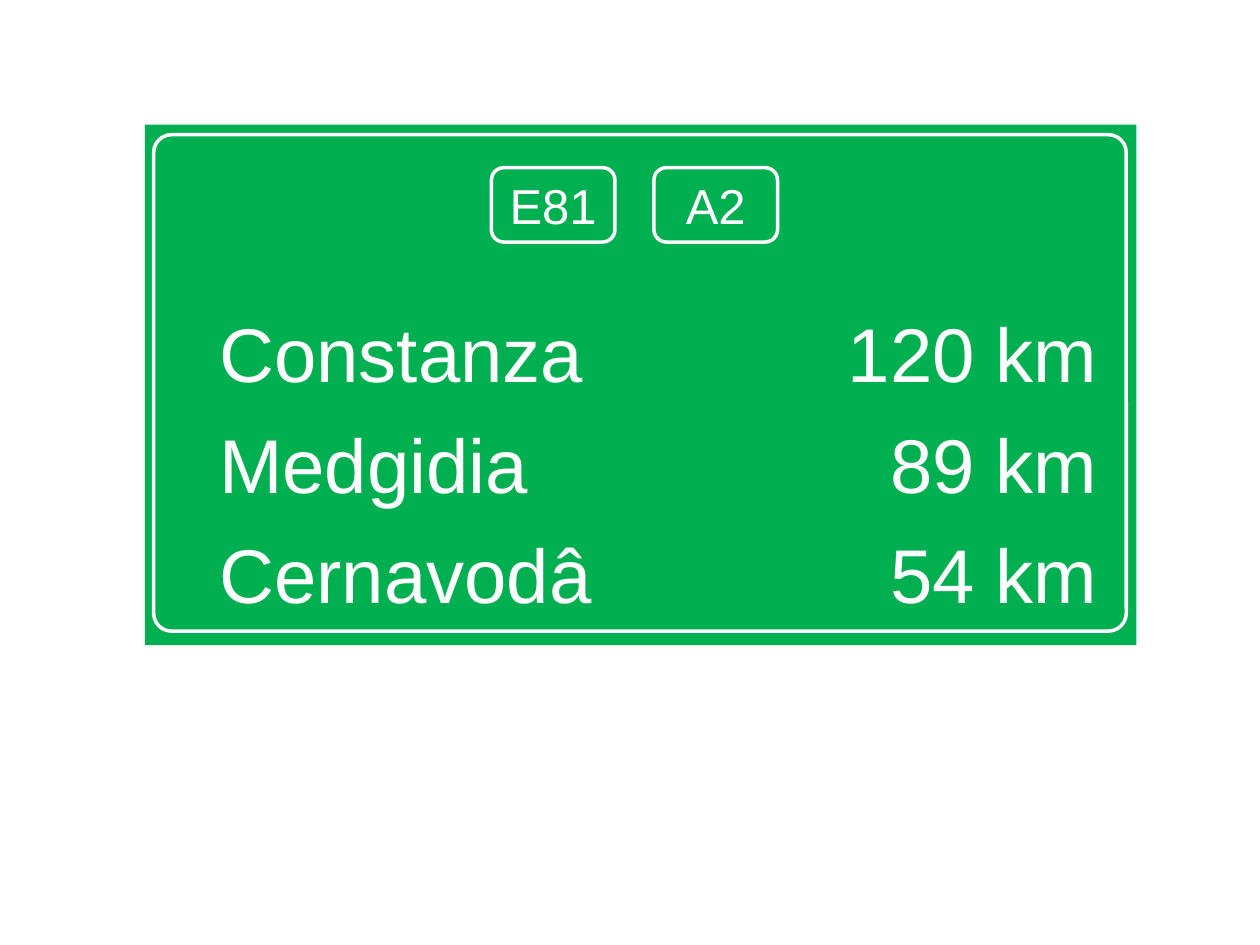
from dataclasses import dataclass

from lxml import etree
from pptx import Presentation
from pptx.dml.color import RGBColor
from pptx.enum import shapes as kinds, text as modes
from pptx.oxml import ns
from pptx.util import Pt


@dataclass(frozen=True)
class Theme:
    """Colours, font and type sizes of the road sign."""
    green: RGBColor = RGBColor(0x00, 0xB0, 0x50)
    white: RGBColor = RGBColor(0xFF, 0xFF, 0xFF)
    face: str = "Arial"
    town: float = 43.5
    road: float = 28
    rule: float = 2


THEME = Theme()
KIND = kinds.MSO_SHAPE
ROADS = ["E81", "A2"]
TOWNS = [("Constanza", 120), ("Medgidia", 89), ("Cernavodâ", 54)]


def add_box(slide, kind, area, fill=None, line=None):
    """Add a preset shape with an optional fill and outline."""
    box = slide.shapes.add_shape(kind, *map(Pt, area))
    box.shadow.inherit = False
    if fill is None:
        box.fill.background()
    else:
        box.fill.solid()
        box.fill.fore_color.rgb = fill
    if line is None:
        box.line.fill.background()
    else:
        box.line.color.rgb = line
        box.line.width = Pt(THEME.rule)
    return box


def set_text(para, words, size, align):
    """Write one paragraph in the sign's white lettering."""
    para.text = words
    para.alignment = align
    para.font.name = THEME.face
    para.font.size = Pt(size)
    para.font.color.rgb = THEME.white


def add_tab(para, pos):
    """Give a paragraph one right-aligned tab stop."""
    props = para._p.get_or_add_pPr()
    tabs = etree.Element(ns.qn("a:tabLst"))
    etree.SubElement(tabs, ns.qn("a:tab"), pos=str(Pt(pos)), algn="r")
    props.insert_element_before(tabs, "a:defRPr", "a:extLst")


def add_board(slide):
    """Add the green board with its towns and distances."""
    board = add_box(slide, KIND.RECTANGLE, (82.8, 71.3, 566.6, 297.4), THEME.green)
    frame = board.text_frame
    frame.word_wrap = True
    frame.vertical_anchor = modes.MSO_ANCHOR.TOP
    frame.margin_left, frame.margin_right = Pt(42.5), Pt(5.8)
    frame.margin_top, frame.margin_bottom = Pt(104), Pt(0)
    for i, (town, dist) in enumerate(TOWNS):
        para = frame.add_paragraph() if i else frame.paragraphs[0]
        set_text(para, f"{town}\t{dist} km", THEME.town, modes.PP_ALIGN.LEFT)
        para.space_after = Pt(10.9)
        add_tab(para, 502)


def add_road(slide, left, name):
    """Add a rounded road number plate."""
    area = (left, 95.8, 70.6, 42.5)
    plate = add_box(slide, KIND.ROUNDED_RECTANGLE, area, THEME.green, THEME.white)
    frame = plate.text_frame
    frame.vertical_anchor = modes.MSO_ANCHOR.MIDDLE
    set_text(frame.paragraphs[0], name, THEME.road, modes.PP_ALIGN.CENTER)


def main():
    """Build the road sign slide and save it."""
    deck = Presentation()
    deck.slide_width, deck.slide_height = Pt(720), Pt(540)
    slide = deck.slides.add_slide(deck.slide_layouts[6])
    add_board(slide)
    rim = add_box(slide, KIND.ROUNDED_RECTANGLE, (87.8, 77, 555.8, 283.7),
                  line=THEME.white)
    rim.adjustments[0] = 0.036
    for i, name in enumerate(ROADS):
        add_road(slide, 280.8 + 92.9 * i, name)
    deck.save("out.pptx")


if __name__ == "__main__":
    main()
